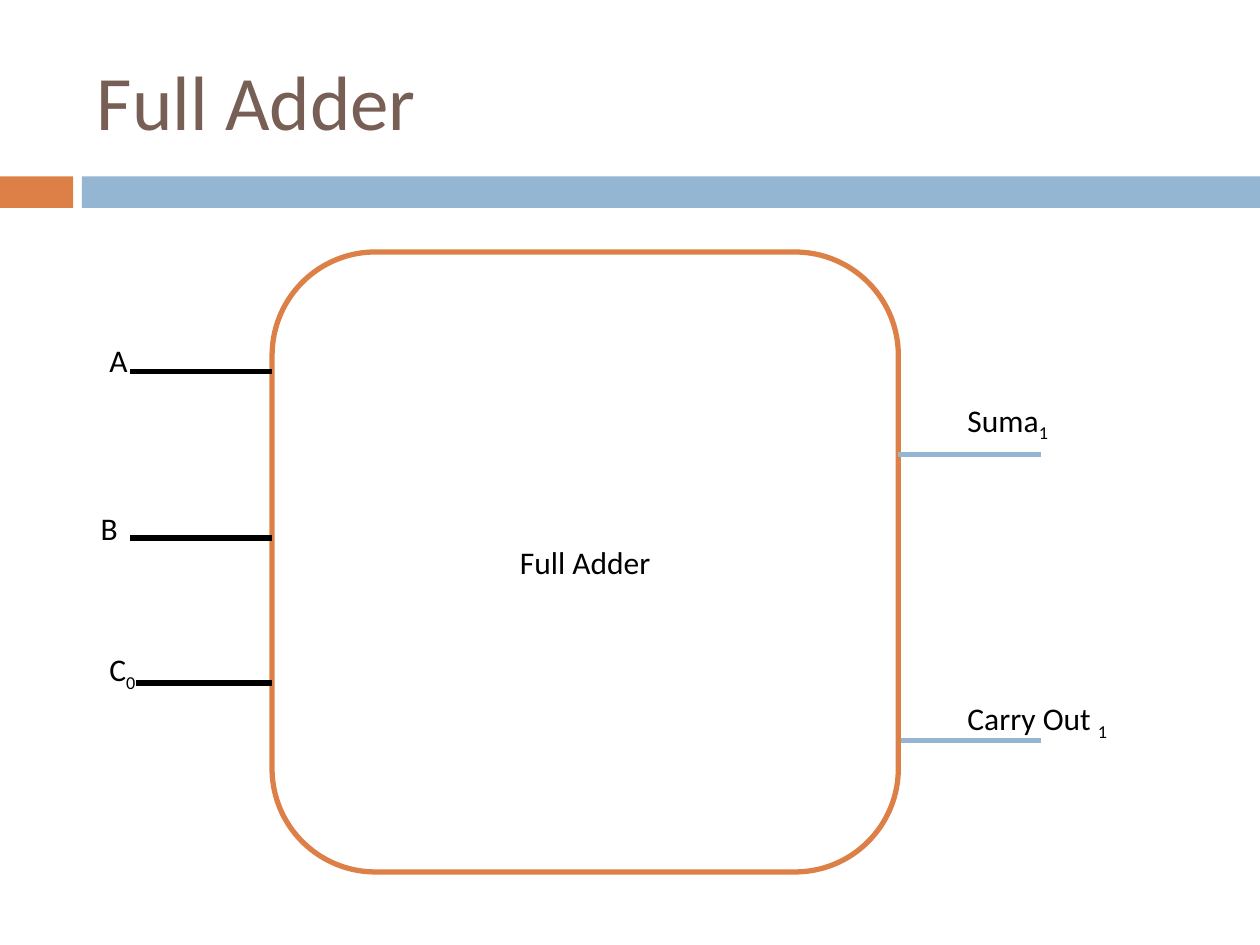
from pptx import Presentation
from pptx import util as u
from pptx.dml import color
from pptx.enum import shapes, text
from pptx.oxml import ns
from lxml import etree

BLUE, RUST, BROWN = "94B6D2", "DD8047", "775F55"
BLACK, WHITE = "000000", "FFFFFF"

# Bands: left, width, fill
BANDS = [(0, 0.58, RUST), (0.65, 9.35, BLUE)]
# Adder block: left, top, width, height
BOX = (2.16, 2, 4.97, 4.92)
# Pins: start x, end x, y, colour
CARRY = (8.26, 5.32, 5.88, BLUE)
PINS = [
    (2.16, 1.03, 2.95, BLACK),
    (8.26, 7.13, 3.61, BLUE),
    (2.16, 1.03, 4.27, BLACK),
    (2.16, 1.08, 5.42, BLACK),
]
# Labels: name, subscript, place
LABELS = [
    ("A", "", (0.77, 2.66, 0.56, 0.47)),
    ("B", "", (0.7, 3.99, 0.56, 0.47)),
    ("C", "0", (0.77, 5.11, 0.56, 0.4)),
    ("Suma", "1", (7.58, 3.13, 1.58, 0.4)),
    ("Carry Out ", "1", (7.58, 5.5, 1.92, 0.4)),
]

deck = Presentation()
deck.slide_width, deck.slide_height = u.Inches(10), u.Inches(7.5)
slide = deck.slides.add_slide(deck.slide_layouts[6])
parts = slide.shapes


def rgb(code):
    return color.RGBColor.from_string(code)


def place(at):
    return [u.Inches(n) for n in at]


def write(frame, name, sub="", size=18, ink=BLACK):
    frame.word_wrap = True
    para = frame.paragraphs[0]
    for word, base in ((name, None), (sub, "-25000")):
        if not word:
            continue
        run = para.add_run()
        run.text = word
        run.font.name, run.font.size = "Calibri", u.Pt(size)
        run.font.color.rgb = rgb(ink)
        if base:
            run.font._element.set("baseline", base)
    return para


def block(kind, at, fill, edge=None):
    shape = parts.add_shape(kind, *place(at))
    shape.shadow.inherit = False
    shape.fill.solid()
    shape.fill.fore_color.rgb = rgb(fill)
    if edge:
        shape.line.color.rgb, shape.line.width = rgb(edge), u.Pt(3)
    else:
        shape.line.fill.background()
    return shape


def label(at, *words, **style):
    frame = parts.add_textbox(*place(at)).text_frame
    write(frame, *words, **style)
    return frame


def pin(start, end, y, ink):
    line = parts.add_connector(shapes.MSO_CONNECTOR.STRAIGHT,
                               *place((start, y, end, y)))
    line.line.color.rgb, line.line.width = rgb(ink), u.Pt(3)
    etree.SubElement(line._element.spPr, ns.qn("a:effectLst"))


# Title and bands
for left, width, fill in BANDS:
    block(shapes.MSO_SHAPE.RECTANGLE, (left, 1.4, width, 0.25), fill)
title = label((0.67, 0.25, 8.92, 1.08), "Full Adder", size=44, ink=BROWN)
title.vertical_anchor = text.MSO_ANCHOR.MIDDLE

# Adder, with the carry line running behind it
pin(*CARRY)
adder = block(shapes.MSO_SHAPE.ROUNDED_RECTANGLE, BOX, WHITE, RUST).text_frame
adder.vertical_anchor = text.MSO_ANCHOR.MIDDLE
write(adder, "Full Adder").alignment = text.PP_ALIGN.CENTER

# Pins and their labels
for row in PINS:
    pin(*row)
for name, sub, at in LABELS:
    label(at, name, sub)

deck.save("out.pptx")
